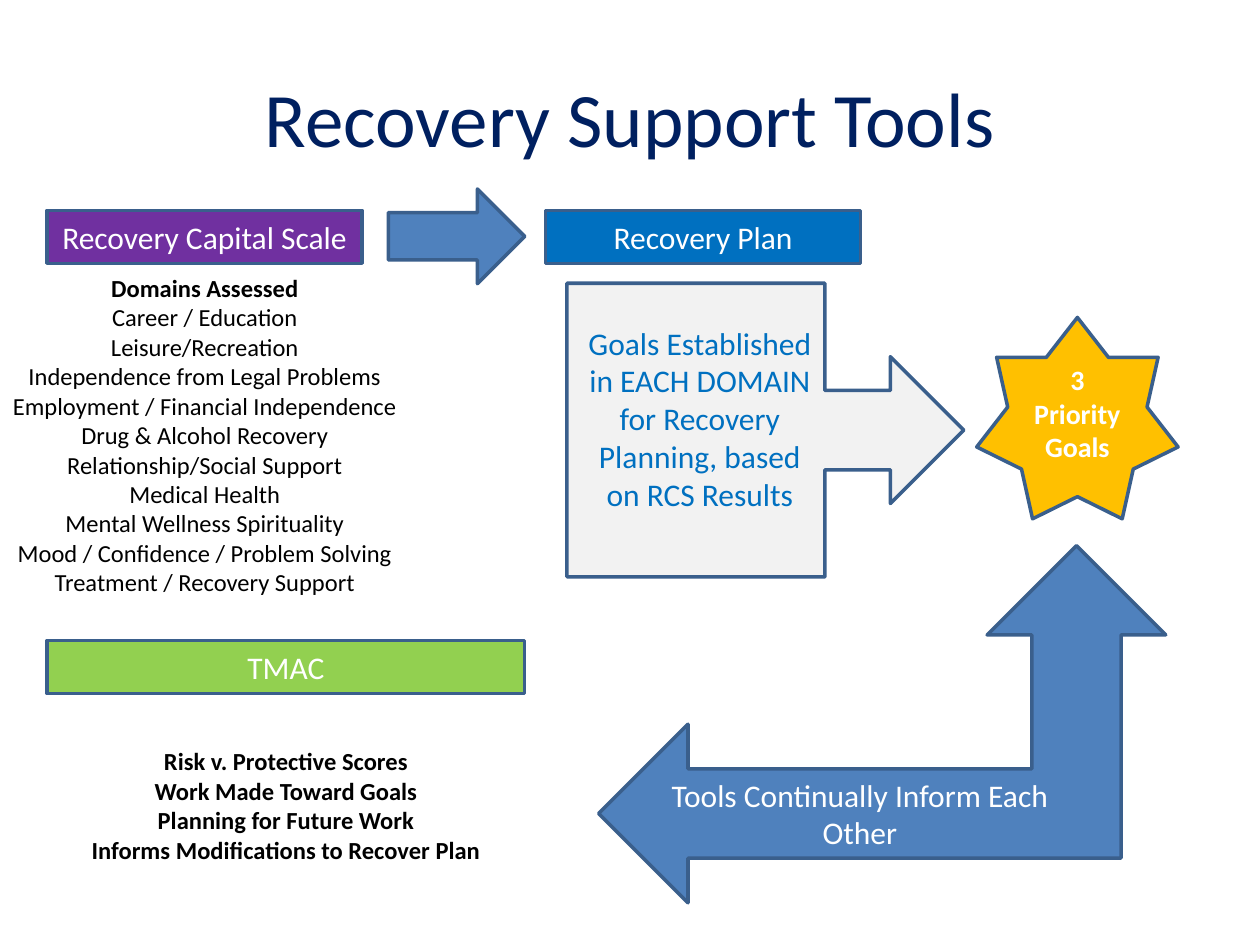
"""Build the Recovery Support Tools slide."""
from pptx import Presentation
from pptx import util as u
from pptx.dml.color import RGBColor
from pptx.enum import shapes, text

NAVY = RGBColor(0x00, 0x20, 0x60)
PURPLE = RGBColor(0x70, 0x30, 0xA0)
BLUE = RGBColor(0x00, 0x70, 0xC0)
STEEL = RGBColor(0x4F, 0x81, 0xBD)
OUTLINE = RGBColor(0x3A, 0x5F, 0x8C)
GREEN = RGBColor(0x92, 0xD0, 0x50)
GOLD = RGBColor(0xFF, 0xC0, 0x00)
PALE = RGBColor(0xF2, 0xF2, 0xF2)
WHITE = RGBColor(0xFF, 0xFF, 0xFF)
BLACK = RGBColor(0x00, 0x00, 0x00)

DOMAINS = [
    "Career / Education",
    "Leisure/Recreation",
    "Independence from Legal Problems",
    "Employment / Financial Independence",
    "Drug & Alcohol Recovery",
    "Relationship/Social Support",
    "Medical Health",
    "Mental Wellness Spirituality",
    "Mood / Confidence / Problem Solving",
    "Treatment / Recovery Support",
]
OUTCOMES = [
    "Risk v. Protective Scores",
    "Work Made Toward Goals",
    "Planning for Future Work",
    "Informs Modifications to Recover Plan",
]


def write(frame, lines, size=18, color=WHITE, bold_lines=0,
          anchor=text.MSO_ANCHOR.MIDDLE):
    """Fill a text frame with centred lines, the first bold_lines in bold."""
    frame.word_wrap = True
    frame.vertical_anchor = anchor
    for index, line in enumerate(lines):
        paragraph = frame.add_paragraph() if index else frame.paragraphs[0]
        paragraph.alignment = text.PP_ALIGN.CENTER
        run = paragraph.add_run()
        run.text = line
        run.font.name = "Calibri"
        run.font.size = u.Pt(size)
        run.font.bold = index < bold_lines
        run.font.color.rgb = color


class ToolsSlide:
    """Hold the outline style and the slide being filled."""

    def __init__(self, slide, outline=OUTLINE, weight=2):
        """Keep the slide and the style of its outlines."""
        self.slide = slide
        self.outline = outline
        self.weight = u.Pt(weight)

    def title(self, line, box):
        """Place and fill the title placeholder."""
        heading = self.slide.shapes.title
        heading.left, heading.top, heading.width, heading.height = map(u.Cm, box)
        write(heading.text_frame, [line], size=44, color=NAVY)

    def shape(self, kind, box, fill, lines=(), **style):
        """Add an outlined preset shape with optional text."""
        shape = self.slide.shapes.add_shape(kind, *map(u.Cm, box))
        shape.shadow.inherit = False
        shape.fill.solid()
        shape.fill.fore_color.rgb = fill
        shape.line.color.rgb = self.outline
        shape.line.width = self.weight
        write(shape.text_frame, lines, **style)
        return shape

    def label(self, line, left, top, width, fill):
        """Add a one-line heading bar."""
        return self.shape(shapes.MSO_SHAPE.RECTANGLE,
                          (left, top, width, 1.07), fill, [line])

    def text(self, lines, box, **style):
        """Add a top-anchored text box."""
        frame = self.slide.shapes.add_textbox(*map(u.Cm, box)).text_frame
        write(frame, lines, anchor=text.MSO_ANCHOR.TOP, **style)


def main():
    """Compose and save the slide."""
    deck = Presentation()
    deck.slide_width, deck.slide_height = u.Cm(25.4), u.Cm(19.05)
    tools = ToolsSlide(deck.slides.add_slide(deck.slide_layouts[5]))
    preset = shapes.MSO_SHAPE

    tools.title("Recovery Support Tools", (1.27, 0.76, 22.86, 3.18))
    tools.label("Recovery Capital Scale", 0.95, 4.24, 6.35, PURPLE)
    tools.text(["Domains Assessed", *DOMAINS], (0, 5.38, 8.26, 7.62),
               size=14, color=BLACK, bold_lines=1)
    tools.shape(preset.RIGHT_ARROW, (7.83, 3.81, 2.75, 1.91), STEEL)
    tools.label("Recovery Plan", 11, 4.24, 6.35, BLUE)

    goals_callout = tools.shape(preset.DOWN_ARROW_CALLOUT,
                                (12.47, 4.67, 5.92, 8), PALE)
    goals_callout.rotation = 270
    for index, value in enumerate((0.27, 0.25, 0.25, 0.65)):
        goals_callout.adjustments[index] = value
    tools.text(["Goals Established in EACH DOMAIN for Recovery Planning, "
                "based on RCS Results"], (11.48, 6.4, 5.26, 4.11), color=BLUE)

    tools.shape(preset.STAR_7_POINT, (19.69, 6.4, 4.06, 4.06), GOLD,
                ["3 Priority Goals"], size=16, bold_lines=1)
    tools.shape(preset.LEFT_UP_ARROW, (12.07, 11, 11.43, 7.2), STEEL,
                ["Tools Continually Inform Each Other"])
    tools.label("TMAC", 0.95, 12.91, 9.63, GREEN)
    tools.text(OUTCOMES, (0.95, 14.92, 9.63, 2.63),
               size=14, color=BLACK, bold_lines=len(OUTCOMES))
    deck.save("out.pptx")


if __name__ == "__main__":
    main()
